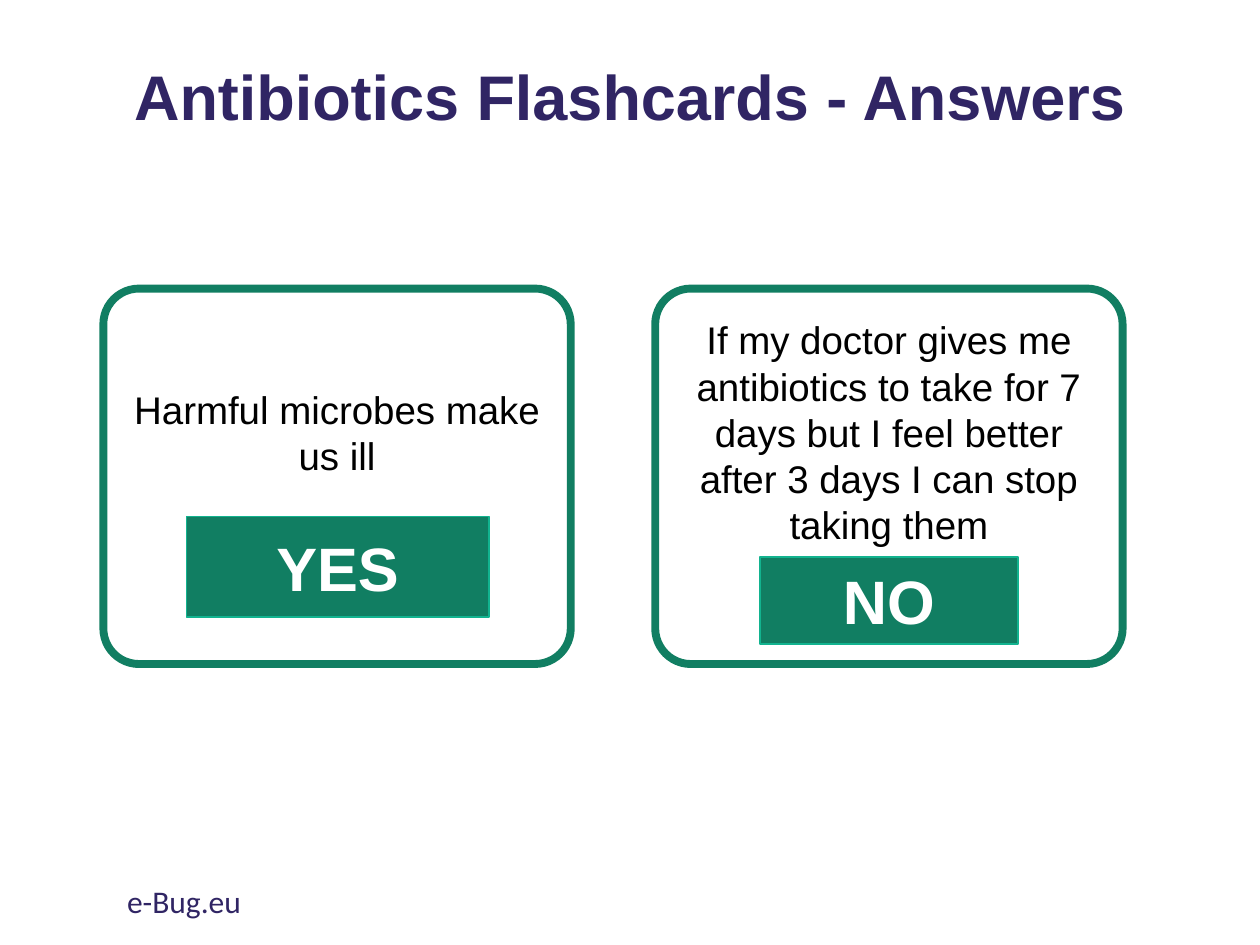
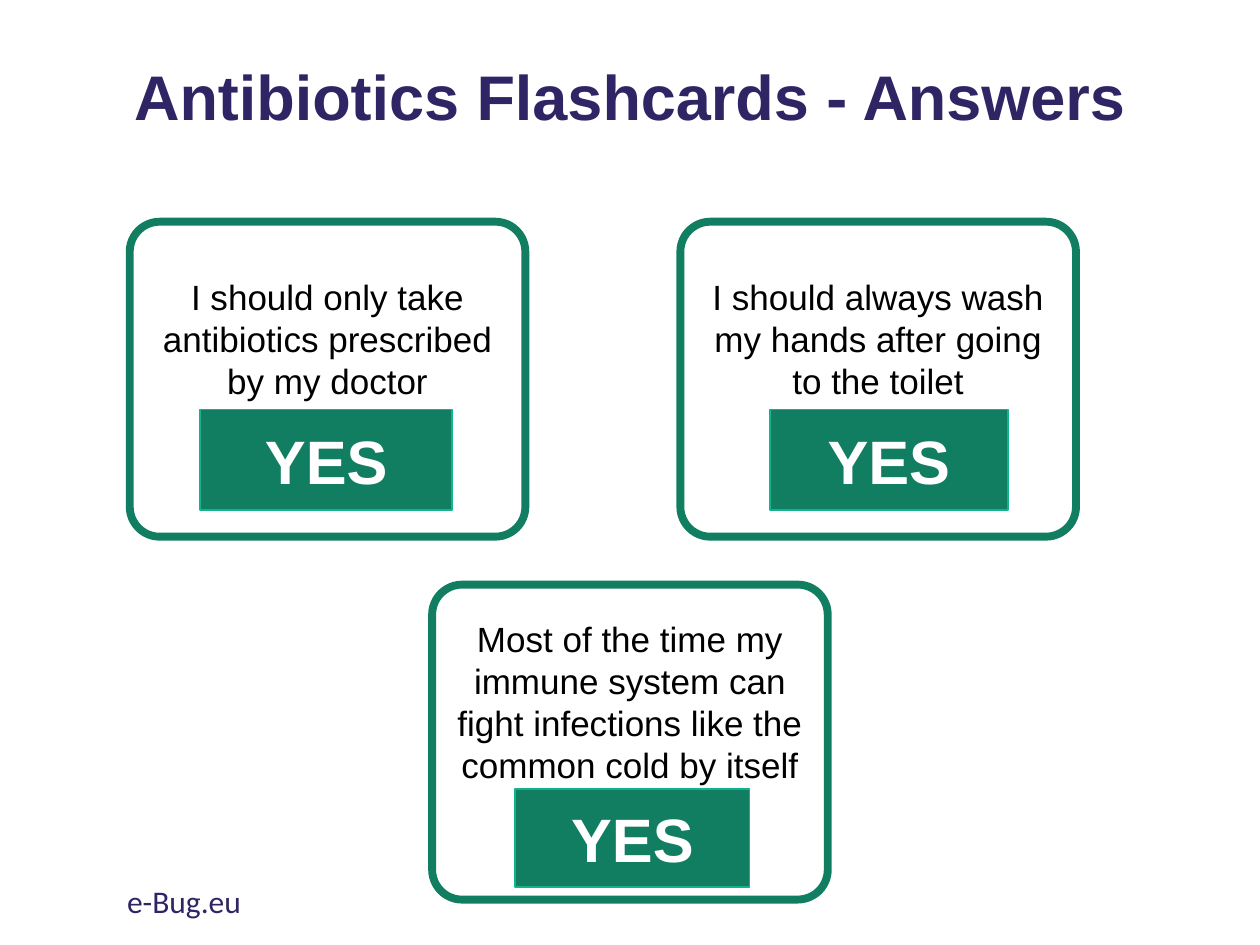
from dataclasses import dataclass

import pptx
import pptx.dml.color
import pptx.enum.shapes
import pptx.enum.text
import pptx.util
from pptx.util import Inches

NAVY = "302564"
GREEN = "117E62"
MINT = "12B38F"
WHITE = "FFFFFF"
BLACK = "000000"
TITLE = "Antibiotics Flashcards - Answers"
FOOTER = "e-Bug.eu"
INSET = 0.05
LINE_HEIGHT = 1.15
TITLE_ONLY = 5
SHAPES = pptx.enum.shapes.MSO_SHAPE
CENTER = pptx.enum.text.PP_ALIGN.CENTER
LEFT = pptx.enum.text.PP_ALIGN.LEFT
MIDDLE = pptx.enum.text.MSO_ANCHOR.MIDDLE
TOP = pptx.enum.text.MSO_ANCHOR.TOP


@dataclass(frozen=True)
class Box:
    left: float
    top: float
    width: float
    height: float

    def lengths(self) -> tuple:
        return tuple(map(Inches, (self.left, self.top, self.width, self.height)))


@dataclass(frozen=True)
class TextStyle:
    size: float
    color: str
    bold: bool = False
    font: str = "Arial"
    align: int = CENTER
    anchor: int = MIDDLE


@dataclass(frozen=True)
class Flashcard:
    left: float
    top: float
    statement: tuple[str, ...]
    answer: str
    answer_box: Box


@dataclass(frozen=True)
class CardPage:
    card_width: float
    card_height: float
    text_size: float
    cards: tuple[Flashcard, ...]


TITLE_BOX = Box(0.69, 0.28, 8.62, 1.03)
FOOTER_BOX = Box(0.91, 6.95, 3.38, 0.4)
TITLE_STYLE = TextStyle(36, NAVY, bold=True)
ANSWER_STYLE = TextStyle(35, WHITE, bold=True)
FOOTER_STYLE = TextStyle(18, NAVY, font="Calibri", align=LEFT, anchor=TOP)

PAGES = (
    CardPage(3.71, 2.98, 22, (
        Flashcard(0.82, 2.29, ("Harmful microbes make us ill",),
                  "YES", Box(1.48, 4.1, 2.4, 0.8)),
        Flashcard(5.2, 2.29,
                  ("If my doctor gives me antibiotics to take for 7 days "
                   "but I feel better after 3 days I can stop taking them",),
                  "NO", Box(6.03, 4.42, 2.05, 0.69)),
    )),
    CardPage(3.14, 2.5, 20, (
        Flashcard(1.03, 1.76,
                  ("I should only take antibiotics prescribed by my doctor",),
                  "YES", Box(1.59, 3.25, 2, 0.8)),
        Flashcard(5.4, 1.76,
                  ("I should always wash my hands after going", "to the toilet"),
                  "YES", Box(6.11, 3.25, 1.89, 0.8)),
        Flashcard(3.43, 4.64,
                  ("Most of the time my",
                   "immune system can fight infections like the common cold by itself"),
                  "YES", Box(4.09, 6.26, 1.86, 0.78)),
    )),
)


def rgb(value: str) -> pptx.dml.color.RGBColor:
    return pptx.dml.color.RGBColor.from_string(value)


def write(shape, lines: tuple[str, ...], style: TextStyle) -> None:
    frame = shape.text_frame
    frame.word_wrap = True
    frame.auto_size = pptx.enum.text.MSO_AUTO_SIZE.NONE
    frame.vertical_anchor = style.anchor
    frame.text = "\n".join(lines)
    for paragraph in frame.paragraphs:
        paragraph.alignment = style.align
        paragraph.font.name = style.font
        paragraph.font.size = pptx.util.Pt(style.size)
        paragraph.font.bold = style.bold
        paragraph.font.color.rgb = rgb(style.color)


def add_panel(page, preset: int, box: Box, line: str, weight: float, fill: str = ""):
    panel = page.shapes.add_shape(preset, *box.lengths())
    panel.shadow.inherit = False
    panel.line.color.rgb = rgb(line)
    panel.line.width = pptx.util.Pt(weight)
    if fill:
        panel.fill.solid()
        panel.fill.fore_color.rgb = rgb(fill)
    else:
        panel.fill.background()
    return panel


def add_flashcard(page, card: Flashcard, layout: CardPage) -> None:
    box = Box(card.left, card.top, layout.card_width, layout.card_height)
    panel = add_panel(page, SHAPES.ROUNDED_RECTANGLE, box, GREEN, 4.5)
    panel.adjustments[0] = 0.095
    write(panel, card.statement, TextStyle(layout.text_size, BLACK))
    two_lines = 2 * LINE_HEIGHT * layout.text_size / 72
    panel.text_frame.margin_bottom = Inches(INSET + two_lines)
    answer = add_panel(page, SHAPES.RECTANGLE, card.answer_box, MINT, 1, GREEN)
    write(answer, (card.answer,), ANSWER_STYLE)


def add_page(deck, layout: CardPage) -> None:
    page = deck.slides.add_slide(deck.slide_layouts[TITLE_ONLY])
    title = page.shapes.title
    title.left, title.top, title.width, title.height = TITLE_BOX.lengths()
    write(title, (TITLE,), TITLE_STYLE)
    title.text_frame.paragraphs[0].line_spacing = 0.9
    for card in layout.cards:
        add_flashcard(page, card, layout)
    footer = page.shapes.add_textbox(*FOOTER_BOX.lengths())
    write(footer, (FOOTER,), FOOTER_STYLE)


def main() -> None:
    deck = pptx.Presentation()
    deck.slide_width = Inches(10)
    deck.slide_height = Inches(7.5)
    for layout in PAGES:
        add_page(deck, layout)
    deck.save("out.pptx")


if __name__ == "__main__":
    main()
